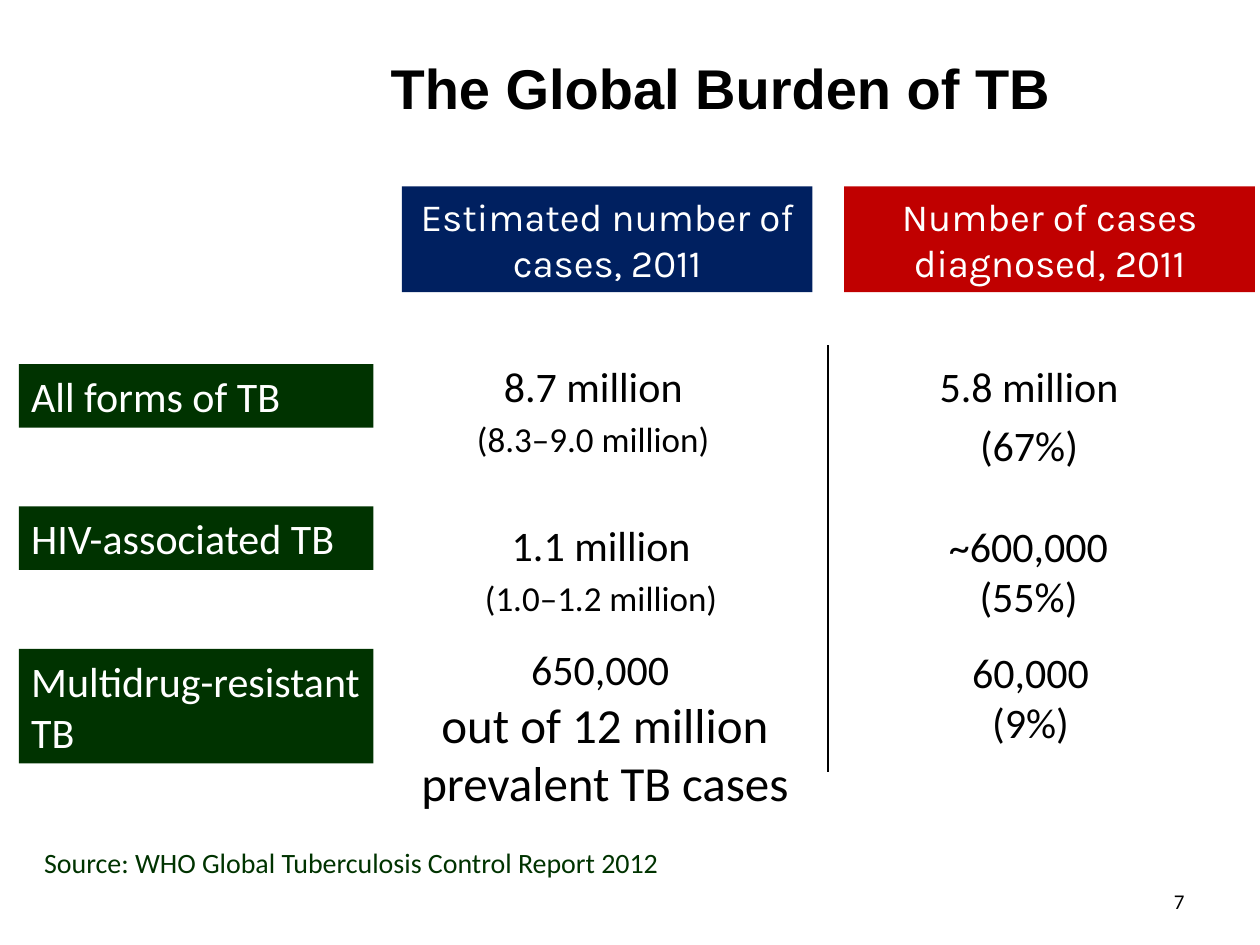
from dataclasses import dataclass

from lxml import etree
from pptx import Presentation
from pptx import util as u
from pptx.dml.color import RGBColor
from pptx.enum import shapes, text


@dataclass(frozen=True)
class Theme:
    """Colours, fonts and type sizes of the slide."""
    ink: str = "000000"
    white: str = "FFFFFF"
    navy: str = "002060"
    red: str = "C00000"
    green: str = "003300"
    body: str = "Calibri"
    head: str = "Karla"
    top: str = "Arial"
    title: int = 32
    large: int = 28
    main: int = 24
    label: int = 22
    range: int = 20
    source: int = 16
    page: int = 12


T = Theme()
LEFT, MID, RIGHT = text.PP_ALIGN.LEFT, text.PP_ALIGN.CENTER, text.PP_ALIGN.RIGHT


def style(run, size, font=T.body, color=T.ink, bold=False):
    """Format one run."""
    run.font.size, run.font.name, run.font.bold = u.Pt(size), font, bold
    run.font.color.rgb = RGBColor.from_string(color)


def add_text(slide, area, lines, align=MID, color=T.ink, gap=0):
    """Add a text box; each line is its wording and the sizes of its runs."""
    frame = slide.shapes.add_textbox(*map(u.Cm, area)).text_frame
    frame.word_wrap = True
    frame.text = "\n".join(words for words, *_ in lines)
    for num, (para, (_, *sizes)) in enumerate(zip(frame.paragraphs, lines)):
        para.alignment = align
        if num and gap:
            para.space_before = u.Pt(gap)
        for run, size in zip(para.runs, sizes):
            style(run, size, color=color)
    return frame


def add_block(slide, area, words, fill, size, font=T.body, align=LEFT):
    """Add a filled rectangle with white text."""
    block = slide.shapes.add_shape(shapes.MSO_SHAPE.RECTANGLE, *map(u.Cm, area))
    block.shadow.inherit = False
    block.fill.solid()
    block.fill.fore_color.rgb = RGBColor.from_string(fill)
    block.line.fill.background()
    frame = block.text_frame
    frame.word_wrap = True
    frame.text = words
    frame.paragraphs[0].alignment = align
    style(frame.paragraphs[0].runs[0], size, font, T.white)


def add_rule(slide, x, top, end):
    """Add the thin line between the two columns."""
    rule = slide.shapes.add_connector(
        shapes.MSO_CONNECTOR.STRAIGHT, u.Cm(x), u.Cm(top), u.Cm(x), u.Cm(end))
    rule.line.color.rgb = RGBColor.from_string(T.ink)
    rule.line.width = u.Pt(0.75)
    props = rule.element.spPr
    etree.SubElement(props, "{http://schemas.openxmlformats.org/drawingml/2006/main}effectLst")


def set_title(slide, words):
    """Place and format the title."""
    title = slide.shapes.title
    title.left, title.top, title.width, title.height = map(u.Cm, (7.62, 0.8, 16.94, 1.9))
    title.text_frame.text = words
    title.text_frame.vertical_anchor = text.MSO_ANCHOR.MIDDLE
    para = title.text_frame.paragraphs[0]
    para.alignment = LEFT
    style(para.runs[0], T.title, T.top, bold=True)


def main():
    """Build the slide."""
    deck = Presentation()
    deck.slide_width, deck.slide_height = u.Cm(25.4), u.Cm(19.05)
    slide = deck.slides.add_slide(deck.slide_layouts[5])
    set_title(slide, "The Global Burden of TB")

    heads = [(8.1, "Estimated number of cases, 2011", T.navy),
             (17.02, "Number of cases diagnosed, 2011", T.red)]
    for left, words, fill in heads:
        add_block(slide, (left, 3.76, 8.28, 2.13), words, fill, T.label, T.head, MID)

    labels = [("All forms of TB", 1.28), ("HIV-associated TB", 1.28),
              ("Multidrug-resistant TB", 2.31)]
    for row, (words, high) in enumerate(labels):
        add_block(slide, (0.38, 7.34 + 2.87 * row, 7.15, high), words, T.green, T.main)

    cells = [
        ((8.1, 7.14, 7.72, 2.31), 4,
         [("8.7 million", T.main), ("(8.3–9.0 million)", T.range)]),
        ((8.22, 10.34, 7.8, 2.31), 4,
         [("1.1 million", T.main), ("(1.0–1.2 million)", T.range)]),
        ((7.7, 12.85, 8.99, 2.82), 0,
         [("650,000 \vout of 12 million prevalent TB cases", T.main, T.large)]),
        ((17, 7.14, 7.49, 2.51), 5, [("5.8 million", T.main), ("(67%)", T.main)]),
        ((16.9, 10.36, 7.67, 2.31), 0, [("~600,000", T.main), ("(55%)", T.main)]),
        ((16.94, 12.9, 7.67, 2.31), 0, [("60,000", T.main), ("(9%)", T.main)]),
    ]
    for area, gap, lines in cells:
        add_text(slide, area, lines, gap=gap)
    add_rule(slide, 16.69, 6.96, 15.57)

    add_text(slide, (0.64, 16.92, 24.13, 0.94),
             [("Source: WHO Global Tuberculosis Control Report 2012", T.source)],
             LEFT, T.green)
    page = add_text(slide, (18.2, 17.65, 5.93, 1.02), [("7", T.page)], RIGHT)
    page.vertical_anchor = text.MSO_ANCHOR.MIDDLE
    deck.save("out.pptx")


if __name__ == "__main__":
    main()
